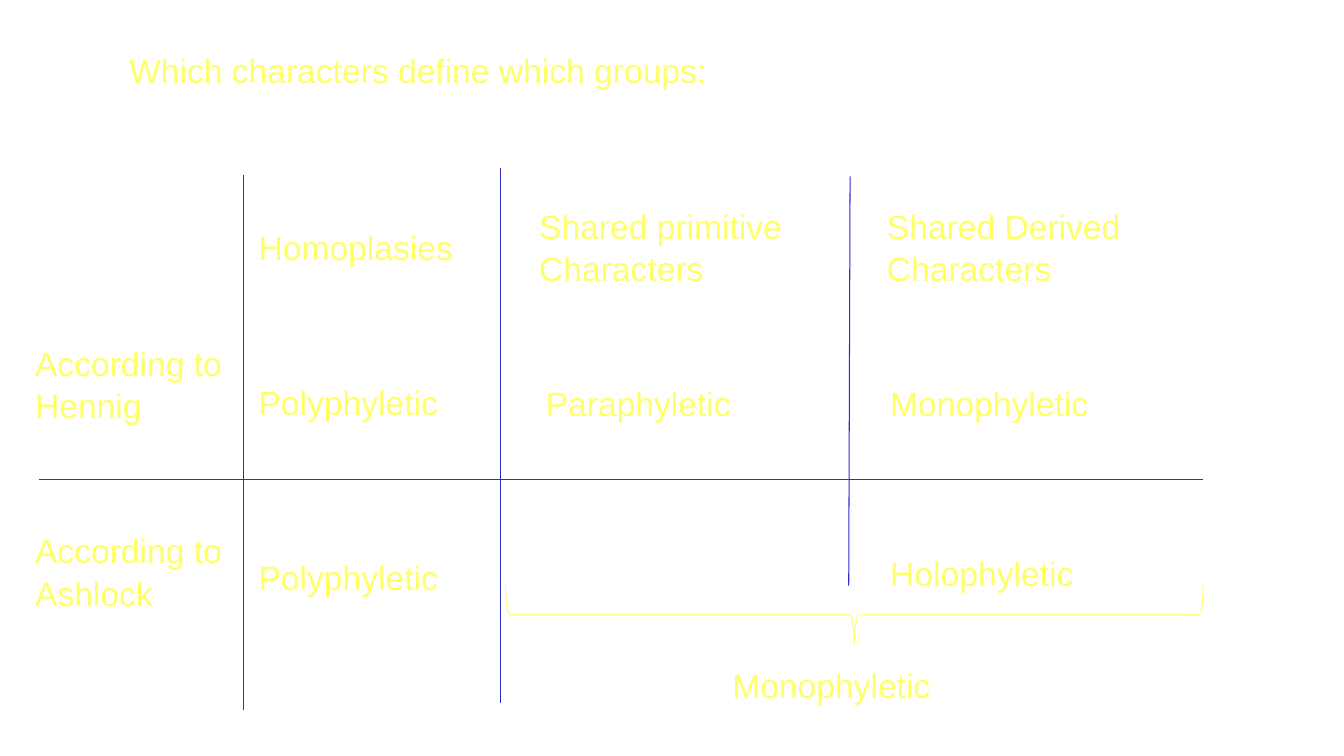
import pptx
import pptx.dml.color
import pptx.enum.shapes
import pptx.enum.text
import pptx.oxml.ns
import pptx.util
from lxml import etree

COLORS = {"text": "FFFF66", "rule": "2E2ECB", "paper": "FFFFFF"}
COLUMNS, ROWS = 40, 30


class GroupsPage:
    def __init__(self, deck):
        self.column = deck.slide_width / COLUMNS
        self.row = deck.slide_height / ROWS
        self.page = deck.slides.add_slide(deck.slide_layouts[6])
        self.page.background.fill.solid()
        self.page.background.fill.fore_color.rgb = self.color("paper")

    def color(self, name):
        return pptx.dml.color.RGBColor.from_string(COLORS[name])

    def place(self, column, row):
        return round(column * self.column), round(row * self.row)

    def outline(self, line, name):
        line.color.rgb = self.color(name)
        line.width = pptx.util.Pt(0.75)

    def label(self, text, column, row, columns):
        rows = 0.44 + 1.6 * len(text.split("\n"))
        box = self.page.shapes.add_textbox(*self.place(column, row), *self.place(columns, rows))
        frame = box.text_frame
        frame.word_wrap = True
        frame.auto_size = pptx.enum.text.MSO_AUTO_SIZE.SHAPE_TO_FIT_TEXT
        para = frame.paragraphs[0]
        para.text = text
        para.line_spacing = 1.05
        for span in para.runs:
            span.font.name = "Arial"
            span.font.size = pptx.util.Pt(24)
            span.font.color.rgb = self.color("text")

    def rule(self, start, end):
        line = self.page.shapes.add_connector(
            pptx.enum.shapes.MSO_CONNECTOR.STRAIGHT, *self.place(*start), *self.place(*end)
        )
        self.outline(line.line, "rule")
        etree.SubElement(line._element.spPr, pptx.oxml.ns.qn("a:effectLst"))

    def brace(self, column, row, columns, rows):
        brace = self.page.shapes.add_shape(
            pptx.enum.shapes.MSO_SHAPE.LEFT_BRACE,
            *self.place(column, row),
            *self.place(columns, rows),
        )
        brace.rotation = 270
        brace.shadow.inherit = False
        brace.fill.solid()
        brace.fill.fore_color.rgb = self.color("paper")
        self.outline(brace.line, "text")


def main():
    deck = pptx.Presentation()
    deck.slide_width = pptx.util.Inches(13.33)
    deck.slide_height = pptx.util.Inches(7.5)
    groups = GroupsPage(deck)

    groups.brace(column=24.54, row=10.56, columns=1.77, rows=27.68)

    labels = [
        ("Which characters define which groups:", 3.55, 1.72, 17.95),
        ("Homoplasies", 7.4, 8.72, 6.45),
        ("Shared primitive\nCharacters", 15.75, 7.88, 8.45),
        ("Shared Derived\nCharacters", 26.1, 7.88, 7.9),
        ("According to\nHennig", 0.75, 13.32, 6.5),
        ("Polyphyletic", 7.4, 14.88, 6.3),
        ("Paraphyletic", 15.95, 14.92, 6.45),
        ("Monophyletic", 26.2, 14.92, 6.55),
        ("According to\nAshlock", 0.75, 20.76, 6.5),
        ("Polyphyletic", 7.4, 21.84, 6.3),
        ("Holophyletic", 26.2, 21.68, 6.1),
        ("Monophyletic", 21.5, 26.12, 6.55),
    ]
    for label in labels:
        groups.label(*label)

    rules = [
        ((1.17, 19.04), (35.8, 19.04)),
        ((7.26, 28.16), (7.26, 6.96)),
        ((14.91, 27.88), (14.91, 6.68)),
        ((25.26, 23.24), (25.3, 7)),
    ]
    for start, end in rules:
        groups.rule(start, end)

    deck.save("out.pptx")


if __name__ == "__main__":
    main()
